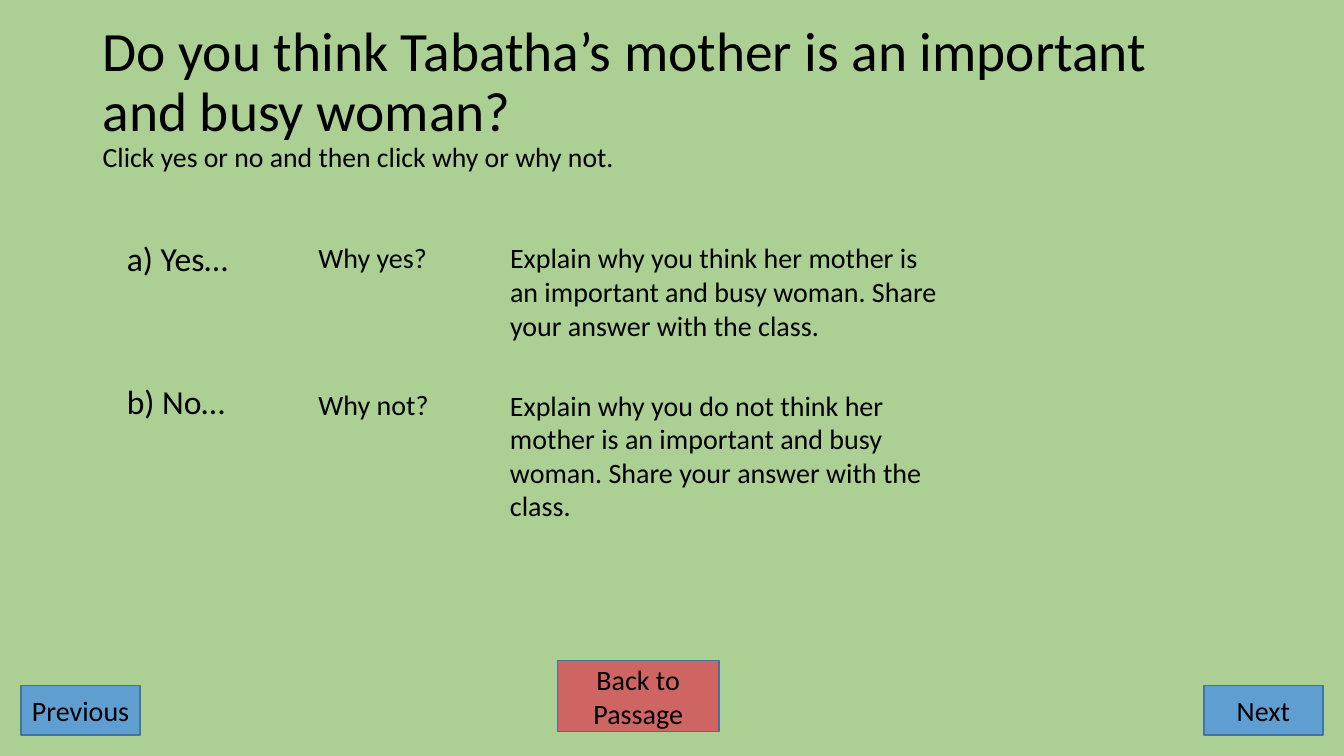
from dataclasses import dataclass

from lxml.etree import SubElement
from pptx import Presentation
from pptx.dml.color import RGBColor
from pptx.enum.shapes import MSO_SHAPE as Shape
from pptx.enum.text import MSO_ANCHOR as Anchor, MSO_AUTO_SIZE as AutoSize, PP_ALIGN as Align
from pptx.oxml.ns import qn
from pptx.util import Inches, Pt


@dataclass(frozen=True)
class Theme:
    """Colours, font and type sizes of the slide."""
    font: str = "Calibri"
    ink: str = "000000"
    background: str = "ACCF94"
    navigation: str = "5B9BD5"
    passage: str = "D15F5F"
    outline: str = "43739E"
    button_opacity: int = 94
    title: float = 39.6
    instruction: float = 19.8
    option: float = 24
    body: float = 20


THEME = Theme()


def add_text(paragraph, text, *, size=THEME.body, color=THEME.ink, align=None):
    """Append a formatted run to a paragraph."""
    run = paragraph.add_run()
    run.text = text
    run.font.name = THEME.font
    run.font.size = Pt(size)
    run.font.color.rgb = RGBColor.from_string(color)
    if align is not None:
        paragraph.alignment = align


def add_title(slide, question, instruction):
    """Add the question with its instruction on the line below."""
    frame = slide.shapes.add_textbox(Inches(0.92), Inches(0.4), Inches(11.5), Inches(1.45)).text_frame
    frame.word_wrap = True
    frame.vertical_anchor = Anchor.MIDDLE
    frame.margin_bottom = Inches(0.35)
    heading = frame.paragraphs[0]
    heading.line_spacing = 0.9
    add_text(heading, question, size=THEME.title)
    heading.add_line_break()
    add_text(heading, instruction, size=THEME.instruction)


def add_label(slide, text, left, top, width, height, **format):
    """Add a wrapping text box that grows with its text."""
    frame = slide.shapes.add_textbox(Inches(left), Inches(top), Inches(width), Inches(height)).text_frame
    frame.word_wrap = True
    frame.auto_size = AutoSize.SHAPE_TO_FIT_TEXT
    add_text(frame.paragraphs[0], text, **format)


def add_button(slide, text, left, top, width, height, color):
    """Add a slightly transparent action button with centred text."""
    button = slide.shapes.add_shape(
        Shape.ACTION_BUTTON_CUSTOM, Inches(left), Inches(top), Inches(width), Inches(height))
    button.shadow.inherit = False
    button.fill.solid()
    button.fill.fore_color.rgb = RGBColor.from_string(color)
    fill_color = button.fill._xPr.find(qn("a:solidFill")).find(qn("a:srgbClr"))
    SubElement(fill_color, qn("a:alpha"), val=str(THEME.button_opacity * 1000))
    button.line.color.rgb = RGBColor.from_string(THEME.outline)
    button.line.width = Pt(1)
    frame = button.text_frame
    frame.word_wrap = True
    frame.vertical_anchor = Anchor.MIDDLE
    add_text(frame.paragraphs[0], text, align=Align.CENTER)


def main():
    """Build and save the question slide."""
    deck = Presentation()
    deck.slide_width, deck.slide_height = Inches(13.33), Inches(7.5)
    slide = deck.slides.add_slide(deck.slide_layouts[6])
    slide.background.fill.solid()
    slide.background.fill.fore_color.rgb = RGBColor.from_string(THEME.background)

    add_title(slide, "Do you think Tabatha’s mother is an important and busy woman?",
              "Click yes or no and then click why or why not.")

    answers = [
        ("a) Yes…", 2.31, "Why yes?", 2.34, 1.11, 4.51,
         "Explain why you think her mother is an important and busy woman. "
         "Share your answer with the class."),
        ("b) No…", 3.73, "Why not?", 3.8, 1.45, 4.36,
         "Explain why you do not think her mother is an important and busy woman. "
         "Share your answer with the class."),
    ]
    for option, option_top, reason, reason_top, task_height, task_width, task in answers:
        add_label(slide, option, 1.16, option_top, 1.8, 0.5, size=THEME.option)
        add_label(slide, reason, 3.06, reason_top, 1.53, 0.44)
        add_label(slide, task, 4.96, reason_top, task_width, task_height)

    for text, left in (("Previous", 0.21), ("Next", 11.94)):
        add_button(slide, text, left, 6.8, 1.18, 0.49, THEME.navigation)
    add_button(slide, "Back to Passage", 5.53, 6.55, 1.6, 0.71, THEME.passage)

    deck.save("out.pptx")


if __name__ == "__main__":
    main()
